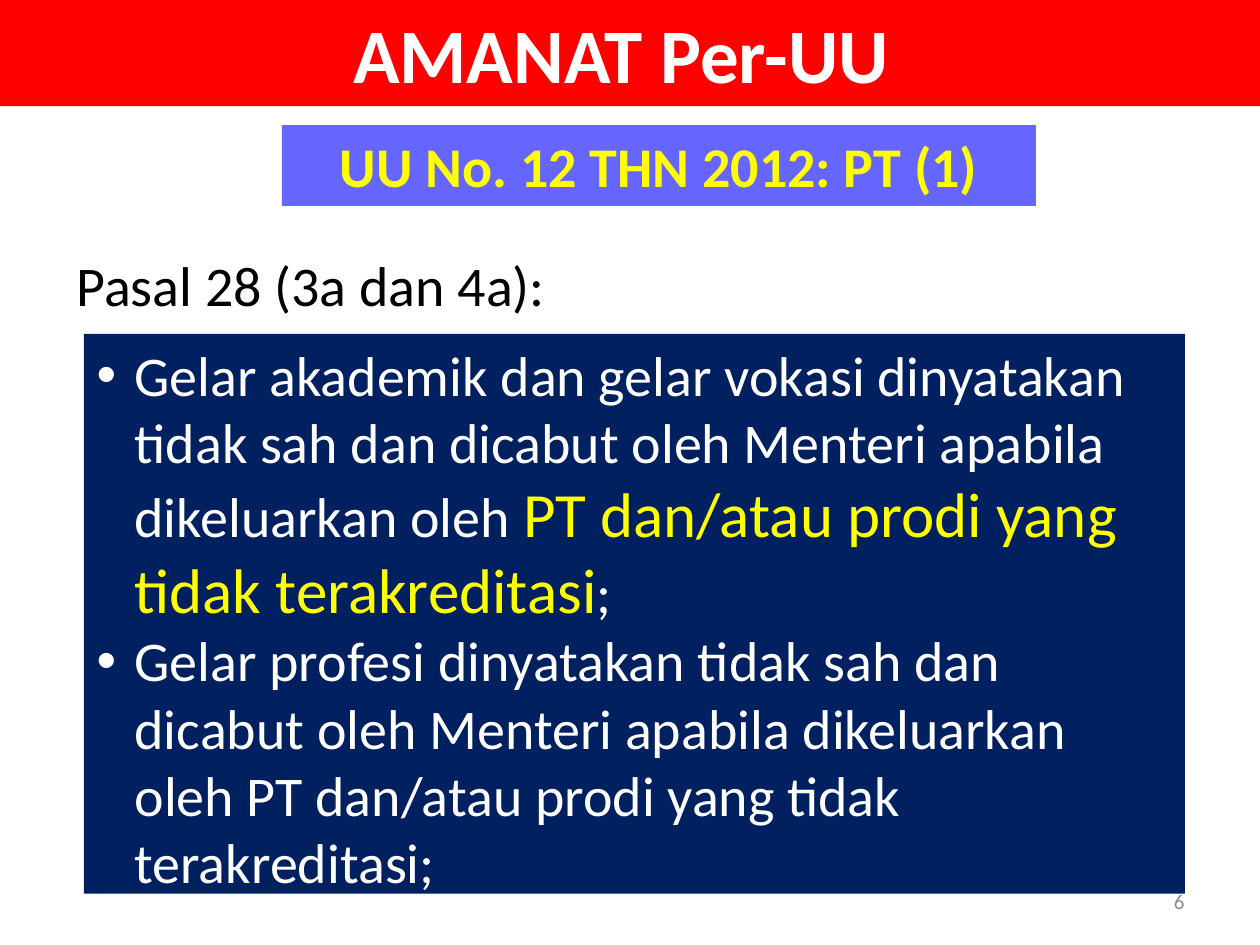
from dataclasses import dataclass

import pptx
import pptx.dml.color
import pptx.enum.text
import pptx.util
from lxml import etree
from pptx.oxml.ns import qn

EMU_PER_PX = 914400 / 126
ALIGN = pptx.enum.text.PP_ALIGN
ANCHOR = pptx.enum.text.MSO_ANCHOR
AUTO_SIZE = pptx.enum.text.MSO_AUTO_SIZE


@dataclass(frozen=True)
class Theme:
    font: str = "Calibri"
    white: str = "FFFFFF"
    black: str = "000000"
    yellow: str = "FFFF00"
    grey: str = "8C8C8C"
    red: str = "FF0000"
    violet: str = "6666FF"
    navy: str = "002060"
    title_size: int = 44
    emphasis_size: int = 36
    text_size: int = 32
    number_size: int = 12


THEME = Theme()


def px(length):
    return pptx.util.Emu(round(length * EMU_PER_PX))


def rgb(color):
    return pptx.dml.color.RGBColor.from_string(color)


def add_text(paragraph, text, *, size=THEME.text_size, color=THEME.white,
             bold=False, align=ALIGN.LEFT):
    """Append a formatted run to a paragraph."""
    paragraph.alignment = align
    run = paragraph.add_run()
    run.text = text
    run.font.name = THEME.font
    run.font.size = pptx.util.Pt(size)
    run.font.bold = bold
    run.font.color.rgb = rgb(color)


def place(box, left, top, width, height, *, fill=None, anchor=ANCHOR.TOP,
          auto_size=AUTO_SIZE.SHAPE_TO_FIT_TEXT):
    """Position a text-bearing box and return its text frame."""
    box.left, box.top = px(left), px(top)
    box.width, box.height = px(width), px(height)
    if fill:
        box.fill.solid()
        box.fill.fore_color.rgb = rgb(fill)
    frame = box.text_frame
    frame.word_wrap = True
    frame.auto_size = auto_size
    frame.vertical_anchor = anchor
    return frame


def add_box(slide, *bounds, **style):
    return place(slide.shapes.add_textbox(0, 0, 0, 0), *bounds, **style)


def set_bullet(paragraph, indent):
    paragraph.space_before = pptx.util.Pt(0)
    properties = paragraph._p.get_or_add_pPr()
    properties.set("marL", str(px(indent)))
    properties.set("indent", str(-px(indent)))
    etree.SubElement(properties, qn("a:buFont")).set("typeface", "Arial")
    etree.SubElement(properties, qn("a:buChar")).set("char", "•")


def fill_list(frame, items):
    """Write each item, a list of (text, format) parts, as a bullet."""
    for index, parts in enumerate(items):
        paragraph = frame.add_paragraph() if index else frame.paragraphs[0]
        set_bullet(paragraph, 38)
        for text, style in parts:
            add_text(paragraph, text, **style)


def main():
    deck = pptx.Presentation()
    deck.slide_width, deck.slide_height = px(1260), px(945)
    slide = deck.slides.add_slide(deck.slide_layouts[1])

    # Title band
    title = place(slide.shapes.title, 0, 0, 1260, 106, fill=THEME.red)
    add_text(title.paragraphs[0], "AMANAT Per-UU ", size=THEME.title_size,
             bold=True, align=ALIGN.CENTER)

    # Name of the law
    law = add_box(slide, 282, 125, 754, 81, fill=THEME.violet)
    add_text(law.paragraphs[0], "UU No. 12 THN 2012: PT (1)",
             color=THEME.yellow, bold=True, align=ALIGN.CENTER)

    # Article heading
    article = add_box(slide, 64, 244, 536, 81)
    add_text(article.paragraphs[0], "Pasal 28 (3a dan 4a):", color=THEME.black)

    # Provisions
    provisions = place(slide.placeholders[1], 84, 334, 1101, 572, fill=THEME.navy)
    emphasis = {"size": THEME.emphasis_size, "color": THEME.yellow}
    fill_list(provisions, [
        [("Gelar akademik dan gelar vokasi dinyatakan tidak sah dan dicabut "
          "oleh Menteri apabila dikeluarkan oleh ", {}),
         ("PT dan/atau prodi yang tidak terakreditasi", emphasis),
         (";", {})],
        [("Gelar profesi dinyatakan tidak sah dan dicabut oleh Menteri apabila "
          "dikeluarkan oleh PT dan/atau prodi yang tidak terakreditasi;", {})],
    ])

    # Slide number
    number = add_box(slide, 903, 876, 294, 50, anchor=ANCHOR.MIDDLE,
                     auto_size=AUTO_SIZE.NONE)
    add_text(number.paragraphs[0], "6", size=THEME.number_size,
             color=THEME.grey, align=ALIGN.RIGHT)

    deck.save("out.pptx")


if __name__ == "__main__":
    main()
